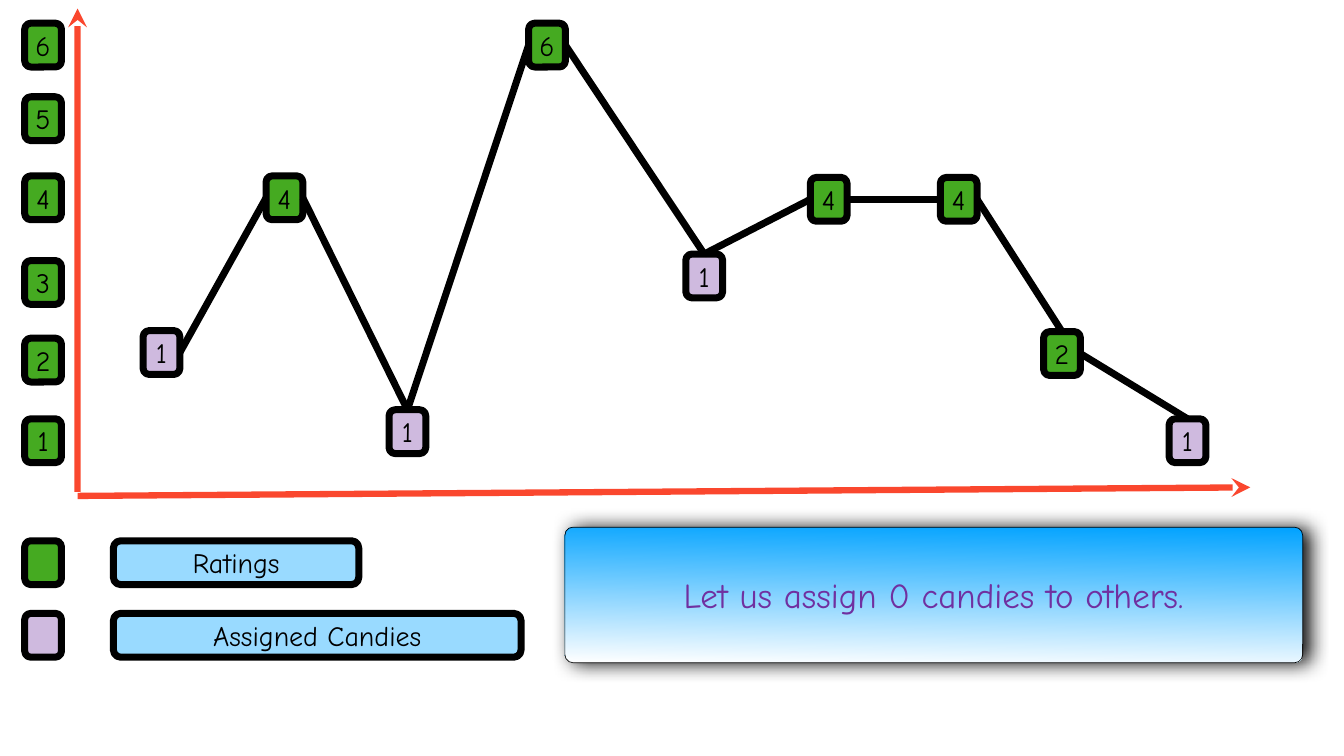
"""Draw the candy ratings slide, with its axes, linked nodes, legend and callout."""
from dataclasses import dataclass

from lxml.etree import SubElement as Sub
from pptx import Presentation as Deck
from pptx.dml.color import RGBColor as Rgb
from pptx.enum.shapes import MSO_CONNECTOR as Link, MSO_SHAPE as Form
from pptx.enum.text import MSO_ANCHOR as Anchor, PP_ALIGN as Align
from pptx.oxml.ns import qn
from pptx.util import Inches, Pt


@dataclass(frozen=True)
class Theme:
    font: str = "Comic Neue"
    ink: str = "000000"
    green: str = "45AA21"
    purple: str = "7030A0"
    red: str = "FA1F00"
    sky: str = "99DAFF"
    blue: str = "00A2FF"
    white: str = "FFFFFF"
    body: int = 40
    large: int = 50
    edge: int = 10
    axis: int = 9


@dataclass(frozen=True)
class Paint:
    color: str
    alpha: int = 100


@dataclass(frozen=True)
class Box:
    left: float
    top: float
    paint: Paint
    text: str = ""
    width: float = 0.73
    height: float = 0.87


@dataclass(frozen=True)
class Edge:
    start: int
    side: int
    end: int
    face: int


@dataclass(frozen=True)
class Axis:
    start: tuple[float, float]
    end: tuple[float, float]


THEME = Theme()
RATED = Paint(THEME.green)
GIVEN = Paint(THEME.purple, 33)
LABEL = Paint(THEME.sky)
TOP, LEFT, RIGHT = 0, 1, 3
KEY_X, LABEL_X = 0.49, 2.25

NODES = [
    Box(2.84, 6.56, GIVEN, "1"),
    Box(5.28, 3.49, RATED, "4"),
    Box(7.72, 8.13, GIVEN, "1"),
    Box(10.49, 0.46, RATED, "6"),
    Box(13.61, 5.04, GIVEN, "1"),
    Box(16.08, 3.52, RATED, "4"),
    Box(18.66, 3.52, RATED, "4"),
    Box(20.71, 6.58, RATED, "2"),
    Box(23.2, 8.31, GIVEN, "1"),
]
EDGES = [
    Edge(0, RIGHT, 1, LEFT),
    Edge(2, TOP, 1, RIGHT),
    Edge(2, TOP, 3, LEFT),
    Edge(4, TOP, 3, RIGHT),
    Edge(4, TOP, 5, LEFT),
    Edge(5, RIGHT, 6, LEFT),
    Edge(7, TOP, 6, RIGHT),
    Edge(7, RIGHT, 8, TOP),
]
AXES = [Axis((1.54, 9.76), (1.54, 0.17)), Axis((1.54, 9.84), (24.81, 9.67))]
SCALE = [
    Box(KEY_X, top, RATED, str(rank))
    for rank, top in enumerate((8.31, 6.71, 5.17, 3.49, 1.92, 0.46), 1)
]
LEGEND = [
    Box(KEY_X, 10.73, RATED),
    Box(LABEL_X, 10.73, LABEL, "Ratings", 4.87),
    Box(KEY_X, 12.17, GIVEN),
    Box(LABEL_X, 12.17, LABEL, "Assigned Candies", 8.09),
]
NOTE = Box(11.21, 10.46, Paint(THEME.blue), "Let us assign 0 candies to others.", 14.64, 2.69)


def fade(item, alpha: int) -> None:
    """Set the alpha, in percent, of the first plain colour in an item."""
    if alpha < 100:
        tone = next(item.iter(qn("a:srgbClr")))
        Sub(tone, qn("a:alpha"), val=str(alpha * 1000))


def write(shape, text: str, *, size: int = THEME.body, color: str = THEME.ink) -> None:
    """Put centred text in a shape."""
    frame = shape.text_frame
    frame.word_wrap = True
    frame.vertical_anchor = Anchor.MIDDLE
    frame.margin_left = frame.margin_right = Inches(0.06)
    frame.margin_top = frame.margin_bottom = Inches(0.06)
    part = frame.paragraphs[0]
    part.alignment = Align.CENTER
    run = part.add_run()
    run.text = text
    run.font.name = THEME.font
    run.font.size = Pt(size)
    run.font.color.rgb = Rgb.from_string(color)


def stroke(item, color: str, width: float) -> None:
    """Set the line colour and width of an item."""
    item.line.color.rgb = Rgb.from_string(color)
    item.line.width = Pt(width)


def draw_box(slide, box: Box, width: float = THEME.edge):
    """Draw a rounded box without text."""
    shape = slide.shapes.add_shape(
        Form.ROUNDED_RECTANGLE,
        Inches(box.left), Inches(box.top), Inches(box.width), Inches(box.height),
    )
    shape.shadow.inherit = False
    shape.fill.solid()
    shape.fill.fore_color.rgb = Rgb.from_string(box.paint.color)
    fade(shape.fill._xPr, box.paint.alpha)
    stroke(shape, THEME.ink, width)
    return shape


def draw_tile(slide, box: Box):
    """Draw a rounded box with its text."""
    shape = draw_box(slide, box)
    if box.text:
        write(shape, box.text)
    return shape


def draw_line(slide, start: tuple, end: tuple, color: str, width: float):
    """Draw a straight line without a shadow."""
    line = slide.shapes.add_connector(
        Link.STRAIGHT, *(Inches(value) for value in (*start, *end))
    )
    stroke(line, color, width)
    Sub(line._element.spPr, qn("a:effectLst"))
    return line


def draw_axis(slide, axis: Axis) -> None:
    """Draw an axis that ends in an arrowhead."""
    line = draw_line(slide, axis.start, axis.end, THEME.red, THEME.axis)
    pen = line._element.spPr.find(qn("a:ln"))
    fade(pen, 82)
    Sub(pen, qn("a:tailEnd"), type="stealth")


def draw_edge(slide, edge: Edge, nodes: list) -> None:
    """Join two nodes with a line."""
    line = draw_line(slide, (0, 0), (0, 0), THEME.ink, THEME.edge)
    line.begin_connect(nodes[edge.start], edge.side)
    line.end_connect(nodes[edge.end], edge.face)


def draw_note(slide, box: Box) -> None:
    """Draw the callout with its gradient and shadow."""
    shape = draw_box(slide, box, 1)
    shape.adjustments[0] = 0.06
    shape.fill.gradient()
    shape.fill.gradient_angle = 269
    for stop, color in zip(shape.fill.gradient_stops, (THEME.blue, THEME.white)):
        stop.color.rgb = Rgb.from_string(color)
    glow = Sub(
        shape._element.spPr.find(qn("a:effectLst")), qn("a:outerShdw"),
        blurRad=str(Pt(28)), dist=str(Pt(9)), dir="0", rotWithShape="0",
    )
    Sub(glow, qn("a:srgbClr"), val=THEME.ink)
    fade(glow, 97)
    write(shape, box.text, size=THEME.large, color=THEME.purple)


def main() -> None:
    """Build and save the deck."""
    deck = Deck()
    deck.slide_width, deck.slide_height = Inches(26.67), Inches(15)
    slide = deck.slides.add_slide(deck.slide_layouts[6])
    nodes = [draw_tile(slide, box) for box in NODES]
    for axis in AXES:
        draw_axis(slide, axis)
    for box in SCALE:
        draw_tile(slide, box)
    for edge in EDGES:
        draw_edge(slide, edge, nodes)
    for box in LEGEND:
        draw_tile(slide, box)
    draw_note(slide, NOTE)
    deck.save("out.pptx")


if __name__ == "__main__":
    main()
